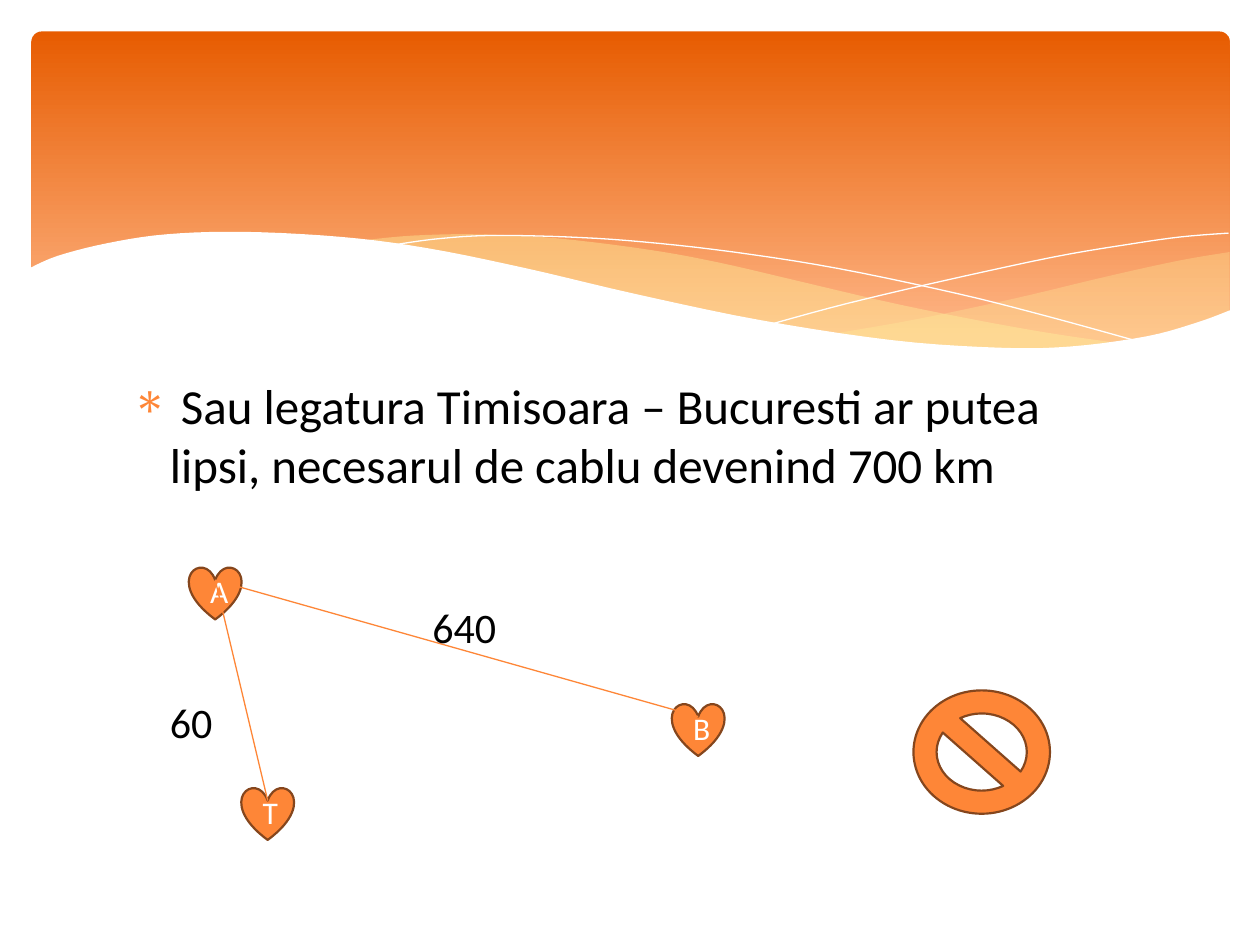
from lxml import etree
from pptx import Presentation
from pptx.dml.color import RGBColor
from pptx.enum.shapes import MSO_CONNECTOR, MSO_SHAPE as Shape
from pptx.enum.text import MSO_ANCHOR, PP_ALIGN
from pptx.oxml.ns import qn
from pptx.util import Pt

COLORS = {
    "header_top": "E75C01", "header_bottom": "FEB687", "ribbon": "FFF39D",
    "orange": "FE8637", "outline": "85461D", "white": "FFFFFF", "black": "000000",
}
FONT = "Calibri"

# Curves of the header, as anchor points
RIGHT_RIBBON_TOP = [(702.7, 144), (673.2, 149), (630.7, 158.4), (579.6, 170.6),
                    (524.9, 182.2), (475.9, 190.8)]
RIGHT_RIBBON_BASE = [(475.9, 190.8), (507.6, 195.1), (545, 198.7), (578.2, 200.2),
                     (614.9, 198.7), (651.6, 193.7), (678.2, 186.5), (702.7, 177.8)]
LONG_RIBBON_TOP = [(643, 196.6), (602.6, 190.8), (558, 182.9), (508.3, 172.8),
                   (452.9, 159.8), (409.7, 149.8), (370.1, 142.6), (317.5, 136.1),
                   (273.6, 133.9), (236.2, 134.6), (205.9, 137.5)]
LONG_RIBBON_BASE = [(205.9, 137.5), (246.2, 143.3), (290.9, 151.9), (353.5, 167),
                    (420.5, 181.4), (478.8, 191.5), (529.9, 198), (573.1, 200.9),
                    (610.6, 200.2), (643, 196.6)]
FALLING_THREAD = [(222.5, 140.4), (247, 136.8), (278.6, 134.6), (324, 135.4),
                  (367.2, 138.2), (419, 144), (478.8, 153.4), (547.2, 167.8),
                  (598.3, 180.7), (653, 195.8)]
RISING_THREAD = [(441.4, 185), (483.8, 173.5), (538.6, 160.6), (601.9, 146.9),
                 (644.4, 139.7), (674.6, 135.4), (702, 133.2)]
WAVE = [(16.6, 153.4), (33, 146.2), (61.2, 139), (95, 133.9), (139, 132.5),
        (195.1, 135.4), (244.1, 141.8), (301, 153.4), (362.2, 167.8), (434.2, 182.9),
        (509.8, 194.4), (571, 198.7), (612, 198), (655.2, 192.2), (684, 184.3),
        (703.4, 177.1)]
WAVE_FLOOR = [(703.4, 236.9), (16.6, 236.9)]

# Cities: left and top of each heart
HEART_SIZE = 30
CITIES = {"A": (108, 324), "B": (384, 402), "T": (138, 450)}
CABLES = [("A", "B"), ("A", "T")]


def color(name):
    return RGBColor.from_string(COLORS[name])


def smooth(anchors, steps=5):
    """Catmull-Rom curve through the anchors."""
    padded = [anchors[0], *anchors, anchors[-1]]
    curve = [anchors[0]]
    for a, b, c, d in zip(padded, padded[1:], padded[2:], padded[3:]):
        for step in range(1, steps + 1):
            t = step / steps
            curve.append(tuple(
                (2 * q + (r - p) * t + (2 * p - 5 * q + 4 * r - s) * t ** 2
                 + (3 * q - p - 3 * r + s) * t ** 3) / 2
                for p, q, r, s in zip(a, b, c, d)))
    return curve


def add_outline(slide, points, close):
    start, *rest = [(Pt(x), Pt(y)) for x, y in points]
    builder = slide.shapes.build_freeform(*start, scale=1.0)
    builder.add_line_segments(rest, close=close)
    outline = builder.convert_to_shape()
    outline.shadow.inherit = False
    return outline


def add_area(slide, points, fill, opacity=100):
    area = add_outline(slide, points, True)
    area.fill.solid()
    area.fill.fore_color.rgb = color(fill)
    area.line.fill.background()
    if opacity < 100:
        tint = area.fill._xPr.find(qn("a:solidFill"))[0]
        etree.SubElement(tint, qn("a:alpha"), val=str(opacity * 1000))


def add_thread(slide, anchors):
    thread = add_outline(slide, smooth(anchors), False)
    thread.fill.background()
    thread.line.color.rgb = color("white")
    thread.line.width = Pt(0)


def add_header(slide):
    band = slide.shapes.add_shape(Shape.ROUNDED_RECTANGLE, Pt(18), Pt(18), Pt(684.7), Pt(194.4))
    band.adjustments[0] = 0.03
    band.shadow.inherit = False
    band.line.fill.background()
    band.fill.gradient()
    band.fill.gradient_angle = 270
    top, bottom = band.fill.gradient_stops
    top.color.rgb, top.position = color("header_top"), 0
    bottom.color.rgb, bottom.position = color("header_bottom"), 0.9

    add_area(slide, smooth(RIGHT_RIBBON_TOP) + smooth(RIGHT_RIBBON_BASE), "ribbon", 29)
    add_area(slide, smooth(LONG_RIBBON_TOP) + smooth(LONG_RIBBON_BASE), "ribbon", 40)
    add_thread(slide, FALLING_THREAD)
    add_thread(slide, RISING_THREAD)
    add_area(slide, smooth(WAVE) + WAVE_FLOOR, "white")


def write(frame, text, size, tone):
    paragraph = frame.paragraphs[0]
    paragraph.text = text
    paragraph.font.name = FONT
    paragraph.font.size = Pt(size)
    paragraph.font.color.rgb = color(tone)
    return paragraph


def add_text(slide, text, left, top, width, height, size):
    frame = slide.shapes.add_textbox(Pt(left), Pt(top), Pt(width), Pt(height)).text_frame
    frame.word_wrap = True
    return write(frame, text, size, "black")


def add_bullet(paragraph):
    props = paragraph._p.get_or_add_pPr()
    props.set("marL", str(Pt(21.6)))
    props.set("indent", str(-Pt(21.6)))
    spacing = etree.SubElement(props, qn("a:spcBef"))
    etree.SubElement(spacing, qn("a:spcPct"), val="20000")
    tint = etree.SubElement(props, qn("a:buClr"))
    etree.SubElement(tint, qn("a:srgbClr"), val=COLORS["orange"])
    etree.SubElement(props, qn("a:buChar"), char="∗")
    # The schema wants the default run properties last
    props.append(props.find(qn("a:defRPr")))


def add_symbol(slide, kind, left, top, width, height):
    symbol = slide.shapes.add_shape(kind, Pt(left), Pt(top), Pt(width), Pt(height))
    symbol.shadow.inherit = False
    symbol.fill.solid()
    symbol.fill.fore_color.rgb = color("orange")
    symbol.line.color.rgb = color("outline")
    symbol.line.width = Pt(1.25)
    return symbol


def add_city(slide, letter, left, top):
    heart = add_symbol(slide, Shape.HEART, left, top, HEART_SIZE, HEART_SIZE)
    heart.text_frame.vertical_anchor = MSO_ANCHOR.MIDDLE
    write(heart.text_frame, letter, 18, "white").alignment = PP_ALIGN.CENTER


def heart_notch(city):
    left, top = CITIES[city]
    return Pt(left + HEART_SIZE / 2), Pt(top + HEART_SIZE / 4)


def add_cable(slide, start, end):
    cable = slide.shapes.add_connector(
        MSO_CONNECTOR.STRAIGHT, *heart_notch(start), *heart_notch(end))
    cable.line.color.rgb = color("orange")
    cable.line.width = Pt(0.75)
    etree.SubElement(cable._element.spPr, qn("a:effectLst"))


def main():
    deck = Presentation()
    deck.slide_width, deck.slide_height = Pt(720), Pt(540)
    slide = deck.slides.add_slide(deck.slide_layouts[6])

    add_header(slide)

    # Statement
    statement = add_text(
        slide, " Sau legatura Timisoara – Bucuresti ar putea lipsi, "
        "necesarul de cablu devenind 700 km", 68.4, 211, 583.2, 271.4, 28)
    add_bullet(statement)

    # Cable network with distances
    for letter, (left, top) in CITIES.items():
        add_city(slide, letter, left, top)
    for start, end in CABLES:
        add_cable(slide, start, end)
    add_text(slide, "60", 90, 394.5, 48, 36.5, 24)
    add_text(slide, "640", 240, 340, 66, 36.5, 24)

    # Sign for the dropped link
    add_symbol(slide, Shape.NO_SYMBOL, 522, 394.5, 78, 70.5)

    deck.save("out.pptx")


if __name__ == "__main__":
    main()
